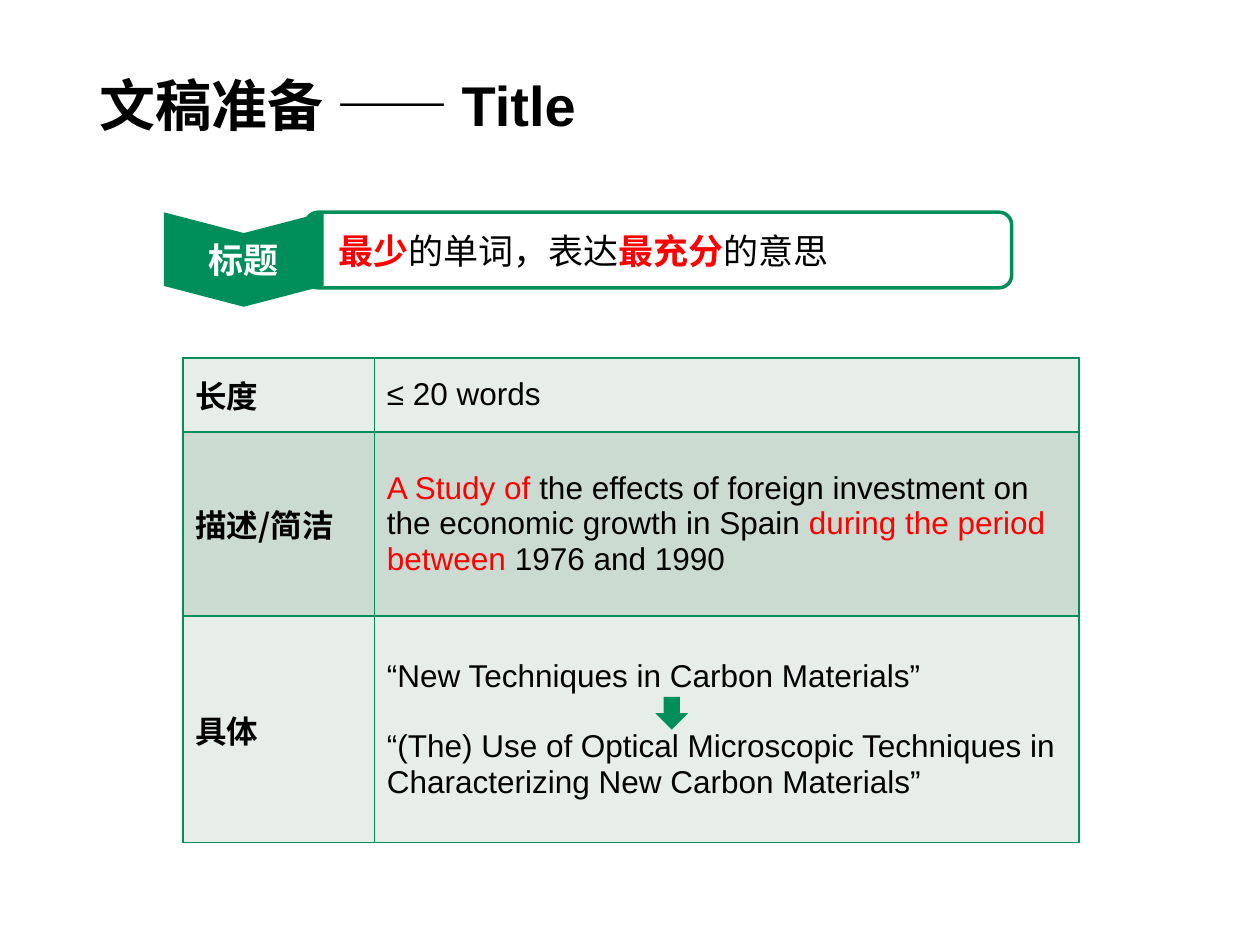
from lxml.etree import SubElement as sub
from pptx import Presentation
from pptx.dml.color import RGBColor
from pptx.enum.shapes import MSO_SHAPE as Shape
from pptx.enum.text import MSO_ANCHOR as Anchor, PP_ALIGN as Align
from pptx.oxml.ns import qn
from pptx.util import Pt

GREEN, RED, BLACK, WHITE = "008F5A", "FF0000", "000000", "FFFFFF"
BANDS = ["E7EEEA", "CCDBD2"]
HAN, LATIN = "Noto Sans CJK SC", "Arial"


def color(code):
    return RGBColor.from_string(code)


def write(frame, *paras, size=18, font=LATIN, bold=False, ink=BLACK,
          align=Align.LEFT, gap=0, anchor=Anchor.MIDDLE):
    """Fill a frame; each paragraph is a list of (text, changes) runs."""
    frame.word_wrap = True
    frame.vertical_anchor = anchor
    for i, runs in enumerate(paras):
        para = frame.paragraphs[0] if i == 0 else frame.add_paragraph()
        para.alignment = align
        if i:
            para.space_before = Pt(gap)
        for text, change in runs:
            look = dict(font=font, bold=bold, ink=ink) | change
            run = para.add_run()
            run.text = text
            run.font.size = Pt(size)
            run.font.name = look["font"]
            run.font.bold = look["bold"]
            run.font.color.rgb = color(look["ink"])
            sub(run.font._element, qn("a:ea"), typeface=look["font"])


def pad(frame, left=0, top=0, right=0, bottom=0):
    frame.margin_left, frame.margin_top = Pt(left), Pt(top)
    frame.margin_right, frame.margin_bottom = Pt(right), Pt(bottom)


def block(slide, kind, x, y, w, h, fill=GREEN, line=None):
    shape = slide.shapes.add_shape(kind, Pt(x), Pt(y), Pt(w), Pt(h))
    shape.shadow.inherit = False
    shape.fill.solid()
    shape.fill.fore_color.rgb = color(fill)
    if line:
        shape.line.color.rgb = color(line)
        shape.line.width = Pt(2)
    else:
        shape.line.fill.background()
    return shape


def heading(slide, x, y, w, h):
    frame = slide.shapes.add_textbox(Pt(x), Pt(y), Pt(w), Pt(h)).text_frame
    pad(frame)
    write(frame, [("文稿准备 —— ", {}), ("Title", {"font": LATIN})],
          size=32, font=HAN, bold=True, anchor=Anchor.BOTTOM)


def banner(slide, x, y, w, h):
    """Rounded bar, with a downward chevron as its label on the left."""
    tab, deep, tall = 91.4, 63.4, 54
    bar = block(slide, Shape.ROUNDED_RECTANGLE, x + deep + 17.6, y,
                w - deep - 17.6, h, WHITE, GREEN)
    pad(bar.text_frame, left=16.5, right=7)
    strong = {"ink": RED, "bold": True}
    write(bar.text_frame, [("最少", strong), ("的单词，表达", {}),
                           ("最充分", strong), ("的意思", {})],
          size=20, font=HAN)

    # The chevron is turned, so its box is placed by its centre.
    mid = x + tab / 2, y + tall / 2
    label = block(slide, Shape.CHEVRON, mid[0] - tall / 2, mid[1] - tab / 2,
                  tall, tab)
    label.rotation = 90
    label.adjustments[0] = 0.22
    label.text_frame._txBody.bodyPr.set("vert", "vert270")
    pad(label.text_frame)
    write(label.text_frame, [("标题", {})], size=20, font=HAN, bold=True,
          ink=WHITE, align=Align.CENTER)


def border(cell):
    props = cell._tc.get_or_add_tcPr()
    for side in ("lnL", "lnR", "lnT", "lnB"):
        line = sub(props, qn(f"a:{side}"), w=str(Pt(1)))
        sub(sub(line, qn("a:solidFill")), qn("a:srgbClr"), val=GREEN)


def rules(slide, x, y, w, h):
    """Table of title rules, with an arrow from the weak to the good title."""
    red = {"ink": RED}
    rows = [
        ("长度", 42.3, [[("≤ 20 words", {})]]),
        ("描述/简洁", 105.2, [[
            ("A Study of ", red),
            ("the effects of foreign investment on the economic growth "
             "in Spain ", {}),
            ("during the period between", red),
            (" 1976 and 1990", {})]]),
        ("具体", h - 147.5, [
            [("“New Techniques in Carbon Materials”", {})],
            [("“(The) Use of Optical Microscopic Techniques in "
              "Characterizing New Carbon Materials”", {})]]),
    ]
    table = slide.shapes.add_table(len(rows), 2, Pt(x), Pt(y),
                                   Pt(w), Pt(h)).table
    table.first_row = table.horz_banding = False
    table.columns[0].width = Pt(109.4)
    table.columns[1].width = Pt(w - 109.4)
    for i, (name, tall, paras) in enumerate(rows):
        table.rows[i].height = Pt(tall)
        head, body = table.cell(i, 0), table.cell(i, 1)
        for cell in (head, body):
            border(cell)
            cell.fill.solid()
            cell.fill.fore_color.rgb = color(BANDS[i % 2])
            cell.vertical_anchor = Anchor.MIDDLE
        write(head.text_frame, [(name, {})], font=HAN, bold=True)
        write(body.text_frame, *paras, gap=20)
    arrow = block(slide, Shape.DOWN_ARROW, x + 270, y + 193.7, 18.7, 18.7)
    arrow.adjustments[0] = arrow.adjustments[1] = 0.5


def main():
    deck = Presentation()
    deck.slide_width, deck.slide_height = Pt(720), Pt(540)
    slide = deck.slides.add_slide(deck.slide_layouts[6])
    heading(slide, 57, 1.5, 581, 77)
    banner(slide, 93.6, 121.3, 484.5, 43.2)
    rules(slide, 104.5, 204.5, 512, 277)
    deck.save("out.pptx")


if __name__ == "__main__":
    main()
